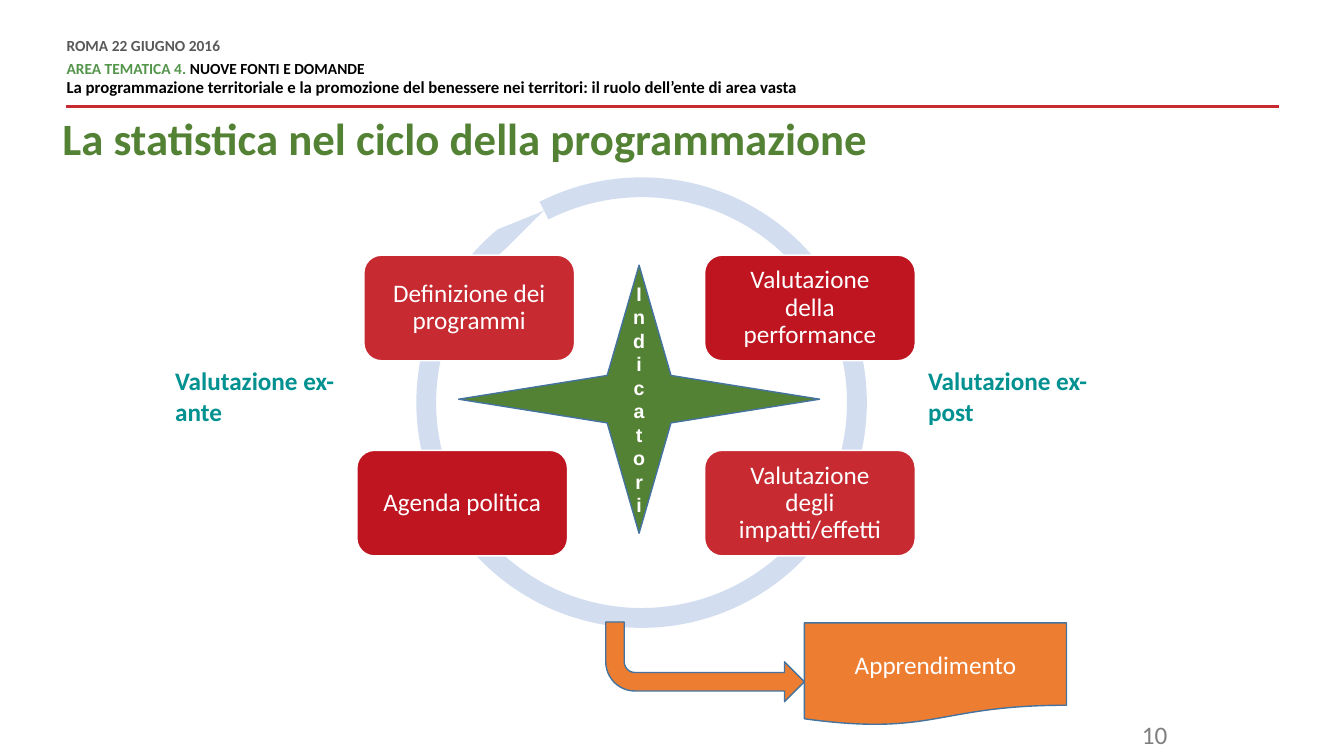
from pptx import Presentation
from pptx import util as u
from pptx.dml.color import RGBColor
from pptx.enum import shapes, text
from pptx.oxml.ns import qn

GREEN = RGBColor(0x54, 0x82, 0x35)
AREA_GREEN = RGBColor(0x53, 0x95, 0x4A)
RED = RGBColor(0xC7, 0x2A, 0x31)
DARK_RED = RGBColor(0xBE, 0x15, 0x20)
ORANGE = RGBColor(0xED, 0x7D, 0x31)
PALE_BLUE = RGBColor(0xD2, 0xDE, 0xEF)
OUTLINE_BLUE = RGBColor(0x43, 0x73, 0x9E)
TEAL = RGBColor(0x00, 0x91, 0x90)
DARK_GREY = RGBColor(0x59, 0x59, 0x59)
GREY = RGBColor(0x7F, 0x7F, 0x7F)
BLACK = RGBColor(0, 0, 0)
WHITE = RGBColor(0xFF, 0xFF, 0xFF)


def points(*values):
    return [u.Pt(value) for value in values]


def set_insets(frame, inset):
    frame.margin_left = frame.margin_right = u.Pt(inset)
    frame.margin_top = frame.margin_bottom = u.Pt(inset)


def style_run(run, size, color, bold=False, name="Calibri"):
    run.font.size = u.Pt(size)
    run.font.color.rgb = color
    run.font.bold = bold
    run.font.name = name


def write(frame, words, size, color, bold=False, name="Calibri",
          align=text.PP_ALIGN.LEFT):
    frame.word_wrap = True
    frame.text = words
    paragraph = frame.paragraphs[0]
    paragraph.alignment = align
    style_run(paragraph.runs[0], size, color, bold, name)
    return paragraph


def add_label(slide, box, words, size, color, bold=False, align=text.PP_ALIGN.LEFT):
    label = slide.shapes.add_textbox(*points(*box))
    write(label.text_frame, words, size, color, bold, align=align)


def add_figure(slide, kind, box, fill, line=None, adjustments=()):
    shape = slide.shapes.add_shape(kind, *points(*box))
    shape.shadow.inherit = False
    shape.fill.solid()
    shape.fill.fore_color.rgb = fill
    if line is None:
        shape.line.fill.background()
    else:
        shape.line.color.rgb = line
        shape.line.width = u.Pt(1)
    for index, value in enumerate(adjustments):
        shape.adjustments[index] = value
    return shape


def write_centred(shape, words, size, bold=False, name="Calibri"):
    shape.text_frame.vertical_anchor = text.MSO_ANCHOR.MIDDLE
    return write(shape.text_frame, words, size, WHITE, bold, name,
                 text.PP_ALIGN.CENTER)


def add_header(slide, left, top, width, height):
    # Red rule
    rule_top = top + 48.2
    rule = slide.shapes.add_connector(
        shapes.MSO_CONNECTOR.STRAIGHT,
        *points(left + 866.2, rule_top, left, rule_top))
    rule.line.color.rgb = RED
    rule.line.width = u.Pt(2)
    properties = rule._element.spPr
    properties.append(properties.makeelement(qn("a:effectLst"), {}))

    # Event, topic area and session
    frame = slide.shapes.add_textbox(*points(left, top, width, height)).text_frame
    frame.word_wrap = True
    set_insets(frame, 0)
    lines = [
        (0, 6, [("ROMA 22 GIUGNO 2016", 11, DARK_GREY)]),
        (0, 0, [("AREA TEMATICA 4. ", 11, AREA_GREEN),
                ("NUOVE FONTI E DOMANDE", 11, BLACK)]),
        (3, 6, [("La programmazione territoriale e la promozione del benessere "
                 "nei territori: il ruolo dell’ente di area vasta", 12, BLACK)]),
    ]
    for index, (before, after, parts) in enumerate(lines):
        paragraph = frame.add_paragraph() if index else frame.paragraphs[0]
        paragraph.line_spacing = u.Pt(10.8)
        paragraph.space_before = u.Pt(before)
        paragraph.space_after = u.Pt(after)
        for words, size, color in parts:
            run = paragraph.add_run()
            run.text = words
            style_run(run, size, color, bold=True)


def add_title(slide, left, top, width, height):
    title = slide.shapes.title
    title.left, title.top, title.width, title.height = points(left, top, width, height)
    frame = title.text_frame
    set_insets(frame, 0)
    frame.auto_size = text.MSO_AUTO_SIZE.NONE
    frame.vertical_anchor = text.MSO_ANCHOR.TOP
    paragraph = write(frame, "La statistica nel ciclo della programmazione",
                      32, GREEN, True)
    paragraph.line_spacing = 0.9


def add_cycle(slide, left, top, size):
    # Star of indicators
    star = add_figure(slide, shapes.MSO_SHAPE.STAR_4_POINT,
                      (left + 30.2, top + 62.7, 257.8, 191.5), GREEN, OUTLINE_BLUE)
    write_centred(star, "Indicatori", 14, True, "Arial")
    star.text_frame._txBody.bodyPr.set("vert", "wordArtVert")

    # Ring
    add_figure(slide, shapes.MSO_SHAPE.CIRCULAR_ARROW, (left, top, size, size),
               PALE_BLUE, adjustments=(0.055, 8.05, 137.754, 145.834, 0.022))

    # Stages
    upper, lower, right = 55.6, 195, 205.9
    stages = [
        ("Valutazione della performance", right, upper, DARK_RED),
        ("Valutazione degli impatti/effetti", right, lower, RED),
        ("Agenda politica", -42.5, lower, DARK_RED),
        ("Definizione dei programmi", -37.5, upper, RED),
    ]
    for words, x, y, color in stages:
        stage = add_figure(slide, shapes.MSO_SHAPE.ROUNDED_RECTANGLE,
                           (left + x, top + y, 150.5, 75.4), color, WHITE)
        set_insets(stage.text_frame, 12)
        write_centred(stage, words, 18).line_spacing = 0.9

    # Side labels
    for words, x in (("Valutazione ex-ante", -179.3), ("Valutazione ex-post", 358.5)):
        add_label(slide, (left + x, top + 131, 159.1, 51.1), words, 18, TEAL, True)


def add_learning(slide, left, top, arrow_width, document_width):
    # Bent arrow, turned to run down and then right
    arrow = add_figure(slide, shapes.MSO_SHAPE.BENT_ARROW,
                       (left, top, arrow_width, 56.9), ORANGE, OUTLINE_BLUE,
                       (0.232, 0.25, 0.25, 0.367))
    arrow._element.spPr.find(qn("a:xfrm")).set("flipV", "1")

    # Document
    document = add_figure(slide, shapes.MSO_SHAPE.FLOWCHART_DOCUMENT,
                          (left + arrow_width, top + 0.6, document_width, 73.4),
                          ORANGE, OUTLINE_BLUE)
    write_centred(document, "Apprendimento", 18)


def main():
    presentation = Presentation()
    presentation.slide_width, presentation.slide_height = points(960, 540)
    slide = presentation.slides.add_slide(presentation.slide_layouts[5])
    add_header(slide, 47.5, 28.1, 889.2, 64.8)
    add_label(slide, (756, 510.5, 85, 25.2), "10", 18, GREY,
              align=text.PP_ALIGN.RIGHT)
    add_title(slide, 44.6, 83.5, 842.4, 58.3)
    add_cycle(slide, 297.4, 126.7, 321.8)
    add_learning(slide, 432.7, 444.3, 141.9, 187.2)
    presentation.save("out.pptx")


if __name__ == "__main__":
    main()
